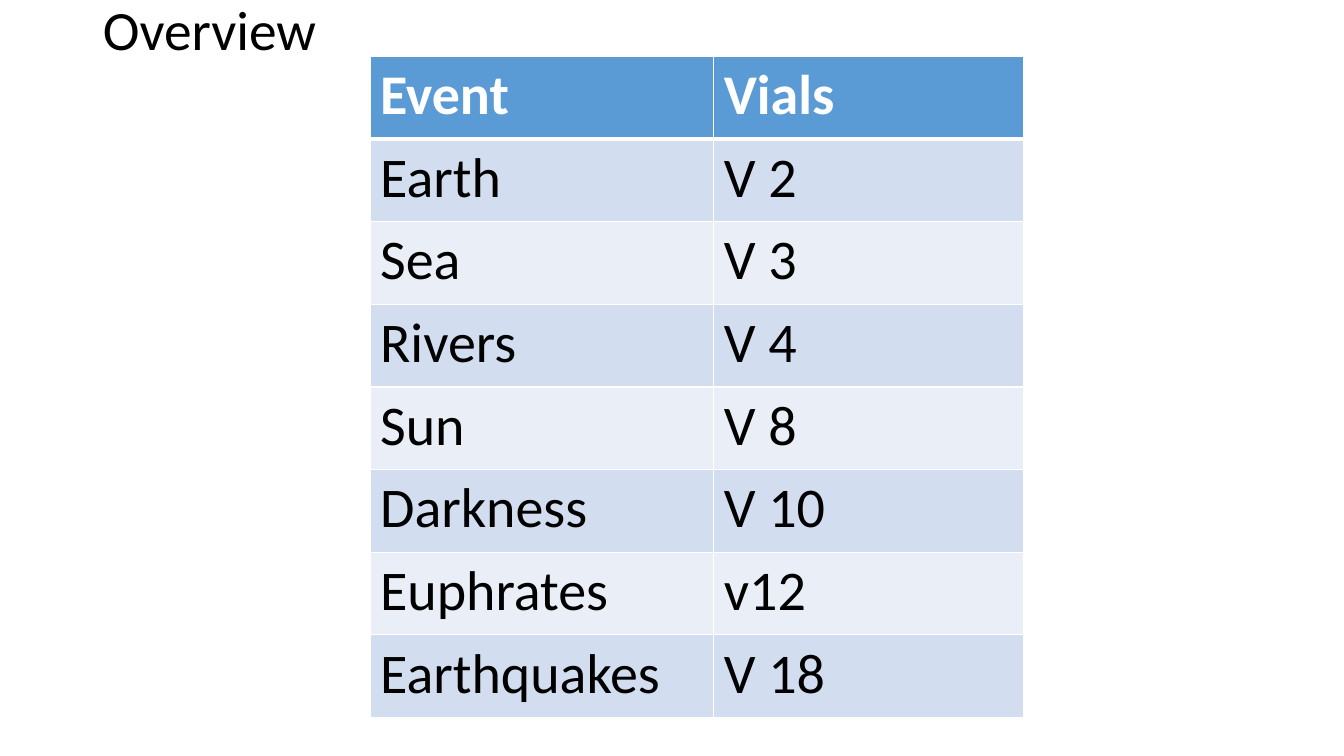
from lxml.etree import SubElement
from pptx import Presentation
from pptx.dml.color import RGBColor
from pptx.enum.text import MSO_ANCHOR, MSO_AUTO_SIZE, PP_ALIGN
from pptx.oxml.ns import qn
from pptx.util import Pt

PX = 9144  # EMU, 100 px to the inch
WHITE = RGBColor(0xFF, 0xFF, 0xFF)
BLACK = RGBColor(0x00, 0x00, 0x00)
HEADER_BLUE = RGBColor(0x5B, 0x9B, 0xD5)
BAND_DARK = RGBColor(0xD2, 0xDE, 0xEF)
BAND_LIGHT = RGBColor(0xEA, 0xEF, 0xF7)

EVENTS = [
    ("Event", "Vials"),
    ("Earth", "V 2"),
    ("Sea", "V 3"),
    ("Rivers", "V 4"),
    ("Sun", "V 8"),
    ("Darkness", "V 10"),
    ("Euphrates", "v12"),
    ("Earthquakes", "V 18"),
]


class SlideBuilder:
    font_name = "Calibri"

    def __init__(self, presentation):
        title_only = presentation.slide_layouts[5]
        self.slide = presentation.slides.add_slide(title_only)

    def style(self, paragraph, size, color, bold=False):
        font = paragraph.font
        font.name, font.size, font.bold = self.font_name, Pt(size), bold
        font.color.rgb = color

    def title(self, text, left, top, width, height):
        heading = self.slide.shapes.title
        heading.left, heading.top = left * PX, top * PX
        heading.width, heading.height = width * PX, height * PX
        frame = heading.text_frame
        frame.text = text
        frame.word_wrap = True
        frame.auto_size = MSO_AUTO_SIZE.NONE
        frame.vertical_anchor = MSO_ANCHOR.MIDDLE
        paragraph = frame.paragraphs[0]
        paragraph.alignment = PP_ALIGN.LEFT
        paragraph.line_spacing = 0.9
        self.style(paragraph, 39.6, BLACK)

    def borders(self, cell, widths):
        properties = cell._tc.get_or_add_tcPr()
        for side, width in widths.items():
            line = SubElement(properties, qn(f"a:ln{side}"), w=str(Pt(width)))
            fill = SubElement(line, qn("a:solidFill"))
            SubElement(fill, qn("a:srgbClr"), val=str(WHITE))

    def table(self, rows, left, top, column_widths, row_height):
        table = self.slide.shapes.add_table(
            len(rows), len(column_widths), left * PX, top * PX,
            sum(column_widths) * PX, len(rows) * row_height * PX).table
        for column, width in zip(table.columns, column_widths):
            column.width = width * PX
        for r, row in enumerate(rows):
            header = r == 0
            band = BAND_DARK if r % 2 else BAND_LIGHT
            for c, text in enumerate(row):
                cell = table.cell(r, c)
                cell.text = text
                self.style(cell.text_frame.paragraphs[0], 40,
                           WHITE if header else BLACK, header)
                # Borders precede the fill in the cell properties
                self.borders(cell, {"L": 1, "R": 1, "T": 3 if r == 1 else 1,
                                    "B": 3 if header else 1})
                cell.fill.solid()
                cell.fill.fore_color.rgb = HEADER_BLUE if header else band


def main():
    presentation = Presentation()
    presentation.slide_width, presentation.slide_height = 1333 * PX, 750 * PX
    overview = SlideBuilder(presentation)

    # Heading
    overview.title("Overview", 92, 8, 1150, 48)

    # Events and the vials they belong to
    overview.table(EVENTS, 367, 56, (341, 307), 82)

    presentation.save("out.pptx")


if __name__ == "__main__":
    main()
